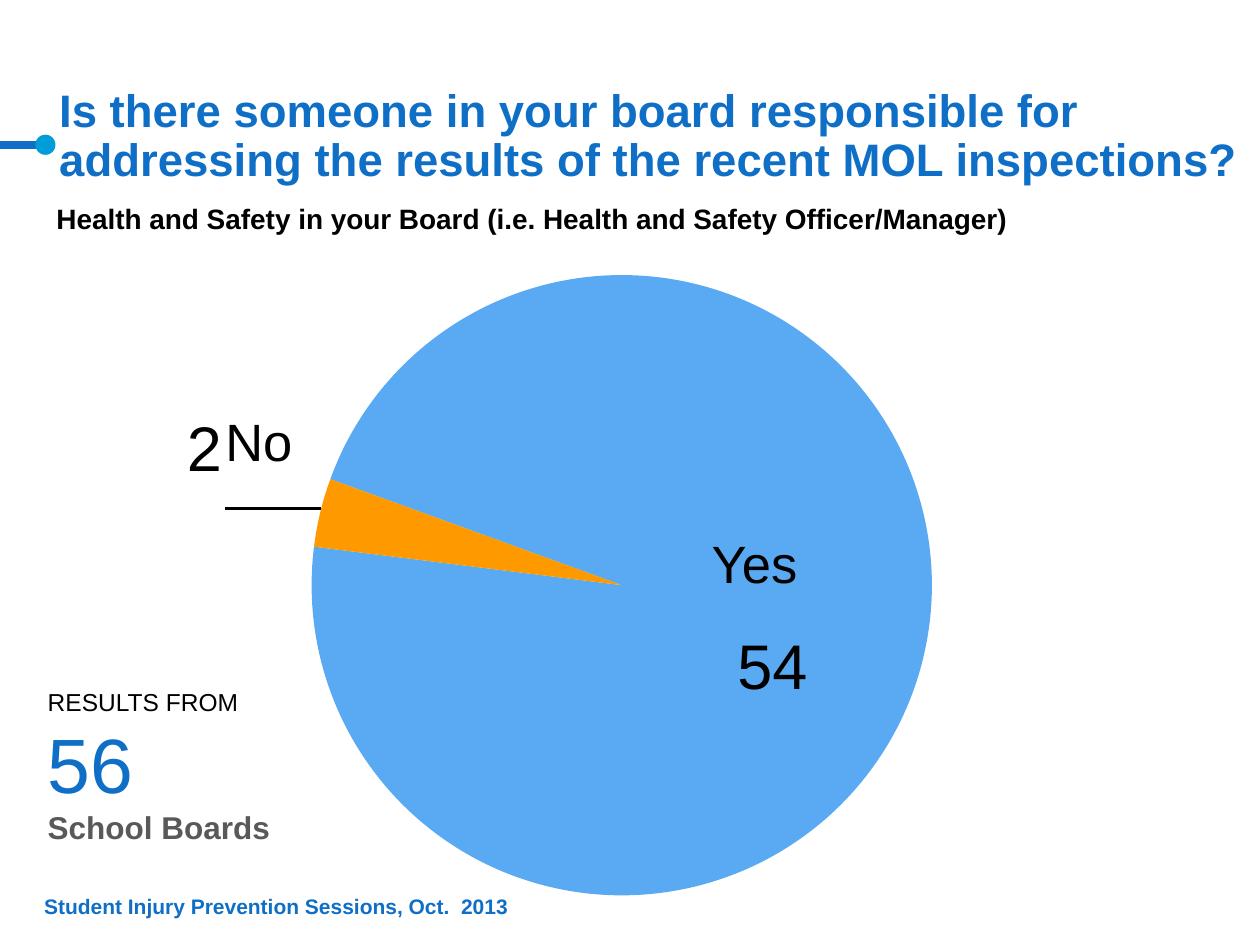
from dataclasses import dataclass

import pptx
import pptx.chart.data
import pptx.dml.color
import pptx.enum.chart
import pptx.enum.shapes
import pptx.enum.text
import pptx.oxml.ns
import pptx.oxml.xmlchemy
import pptx.util
from pptx.chart.chart import Chart
from pptx.slide import Slide

Pt = pptx.util.Pt
RGBColor = pptx.dml.color.RGBColor
Anchor = pptx.enum.text.MSO_ANCHOR
LabelPosition = pptx.enum.chart.XL_LABEL_POSITION
qn = pptx.oxml.ns.qn
OxmlElement = pptx.oxml.xmlchemy.OxmlElement

BLUE = RGBColor(0x0F, 0x6F, 0xC6)
CYAN = RGBColor(0x00, 0x9D, 0xD9)
SKY = RGBColor(0x59, 0xAA, 0xF2)
ORANGE = RGBColor(0xFF, 0x99, 0x00)
BLACK = RGBColor(0, 0, 0)
GRAY = RGBColor(0x59, 0x59, 0x59)


@dataclass
class Para:
    text: str
    size: float
    color: RGBColor = BLACK
    bold: bool = False


@dataclass
class TextBox:
    box: tuple[float, float, float, float]
    paras: list[Para]
    insets: tuple[float, float, float, float] = (7.2, 3.6, 7.2, 3.6)
    anchor: Anchor = Anchor.TOP
    line_spacing: float | None = None


@dataclass
class Line:
    x1: float
    x2: float
    y: float
    width: float
    color: RGBColor


@dataclass
class Slice:
    category: str
    value: int
    color: RGBColor
    position: LabelPosition
    dx: float
    dy: float


TEXTS = [
    TextBox((33.84, 3.6, 677.5, 102.2),
            [Para("Is there someone in your board responsible for addressing "
                  "the results of the recent MOL inspections?", 26, BLUE, True)],
            (0, 3.6, 0, 0), Anchor.BOTTOM, 28),
    TextBox((25.2, 111.6, 681, 26.6),
            [Para("Health and Safety in your Board (i.e. Health and Safety "
                  "Officer/Manager)", 16, BLACK, True)]),
    TextBox((399.6, 300.2, 98, 44), [Para("Yes", 30)]),
    TextBox((121.7, 230.4, 61, 44), [Para("No", 30)]),
    TextBox((20.2, 388.8, 153.4, 99.4),
            [Para("RESULTS FROM", 14), Para("56", 44, BLUE),
             Para("School Boards", 18, GRAY, True)]),
    TextBox((25.2, 506.2, 284.4, 18.7),
            [Para("Student Injury Prevention Sessions, Oct.  2013", 12, BLUE, True)],
            (0, 0, 0, 0), Anchor.BOTTOM),
]
SLICES = [
    Slice("1", 54, SKY, LabelPosition.CENTER, 0, 0.07),
    Slice("2", 2, ORANGE, LabelPosition.OUTSIDE_END, -0.1, -0.04),
]
TITLE_LINE = Line(0, 25.2, 82.8, 4.75, BLUE)
LEADER_LINE = Line(128.6, 183.4, 290.6, 2.25, BLACK)


def set_attrs(obj: object, values: dict) -> None:
    for name, value in values.items():
        setattr(obj, name, value)


def add_text(s: Slide, item: TextBox) -> None:
    tf = s.shapes.add_textbox(*map(Pt, item.box)).text_frame
    left, top, right, bottom = map(Pt, item.insets)
    set_attrs(tf, {"word_wrap": True, "vertical_anchor": item.anchor,
                   "margin_left": left, "margin_top": top,
                   "margin_right": right, "margin_bottom": bottom})
    for i, para in enumerate(item.paras):
        p = tf.add_paragraph() if i else tf.paragraphs[0]
        if item.line_spacing:
            p.line_spacing = Pt(item.line_spacing)
        r = p.add_run()
        r.text = para.text
        set_attrs(r.font, {"name": "Arial", "size": Pt(para.size), "bold": para.bold})
        r.font.color.rgb = para.color


def add_line(s: Slide, line: Line) -> None:
    sp = s.shapes.add_connector(pptx.enum.shapes.MSO_CONNECTOR.STRAIGHT,
                                Pt(line.x1), Pt(line.y), Pt(line.x2), Pt(line.y))
    sp.line.width = Pt(line.width)
    sp.line.color.rgb = line.color
    sp._element.spPr.append(OxmlElement("a:effectLst"))


def make_layout(values: dict) -> object:
    layout = OxmlElement("c:layout")
    manual = OxmlElement("c:manualLayout")
    layout.append(manual)
    for name, value in values.items():
        child = OxmlElement(f"c:{name}")
        child.set("val", str(value))
        manual.append(child)
    return layout


def set_plot_layout(chart: Chart) -> None:
    area = chart._chartSpace.chart.plotArea
    for old in area.findall(qn("c:layout")):
        area.remove(old)
    area.insert(0, make_layout({"layoutTarget": "inner", "xMode": "edge",
                                "yMode": "edge", "x": 0.14, "y": 0.03,
                                "w": 0.68, "h": 0.95}))


def add_pie(s: Slide) -> None:
    data = pptx.chart.data.CategoryChartData()
    data.categories = [item.category for item in SLICES]
    data.add_series("Series 1", [item.value for item in SLICES])
    chart = s.shapes.add_chart(pptx.enum.chart.XL_CHART_TYPE.PIE, Pt(105.1),
                               Pt(145.4), Pt(521.3), Pt(374.4), data).chart
    set_attrs(chart, {"has_legend": False, "has_title": False})
    set_attrs(chart.font, {"name": "Vollkorn", "size": Pt(18)})
    chart.font.color.rgb = BLACK
    set_plot_layout(chart)
    plot = chart.plots[0]
    plot.vary_by_categories = True
    angle = plot._element.find(qn("c:firstSliceAng"))
    if angle is None:
        angle = OxmlElement("c:firstSliceAng")
        plot._element.append(angle)
    angle.set("val", "290")
    series = plot.series[0]
    labels = series.data_labels
    labels.show_value = True
    for leader in labels._element.findall(qn("c:showLeaderLines")):
        leader.set("val", "0")
    for i, item in enumerate(SLICES):
        point = series.points[i]
        point.format.fill.solid()
        point.format.fill.fore_color.rgb = item.color
        point.format.line.fill.background()
        label = point.data_label
        set_attrs(label.font, {"name": "Arial", "size": Pt(36)})
        label.font.color.rgb = BLACK
        label.position = item.position
        node = labels._element.findall(qn("c:dLbl"))[i]
        node.insert(1, make_layout({"x": item.dx, "y": item.dy}))


def add_dot(s: Slide) -> None:
    sp = s.shapes.add_shape(pptx.enum.shapes.MSO_SHAPE.OVAL,
                            Pt(20.2), Pt(77), Pt(11.5), Pt(11.5))
    sp.shadow.inherit = False
    sp.fill.solid()
    sp.fill.fore_color.rgb = CYAN
    sp.line.fill.background()


def main() -> None:
    prs = pptx.Presentation()
    set_attrs(prs, {"slide_width": Pt(720), "slide_height": Pt(540)})
    s = prs.slides.add_slide(prs.slide_layouts[6])
    add_line(s, TITLE_LINE)
    add_pie(s)
    add_line(s, LEADER_LINE)
    for item in TEXTS:
        add_text(s, item)
    add_dot(s)
    prs.save("out.pptx")


if __name__ == "__main__":
    main()
